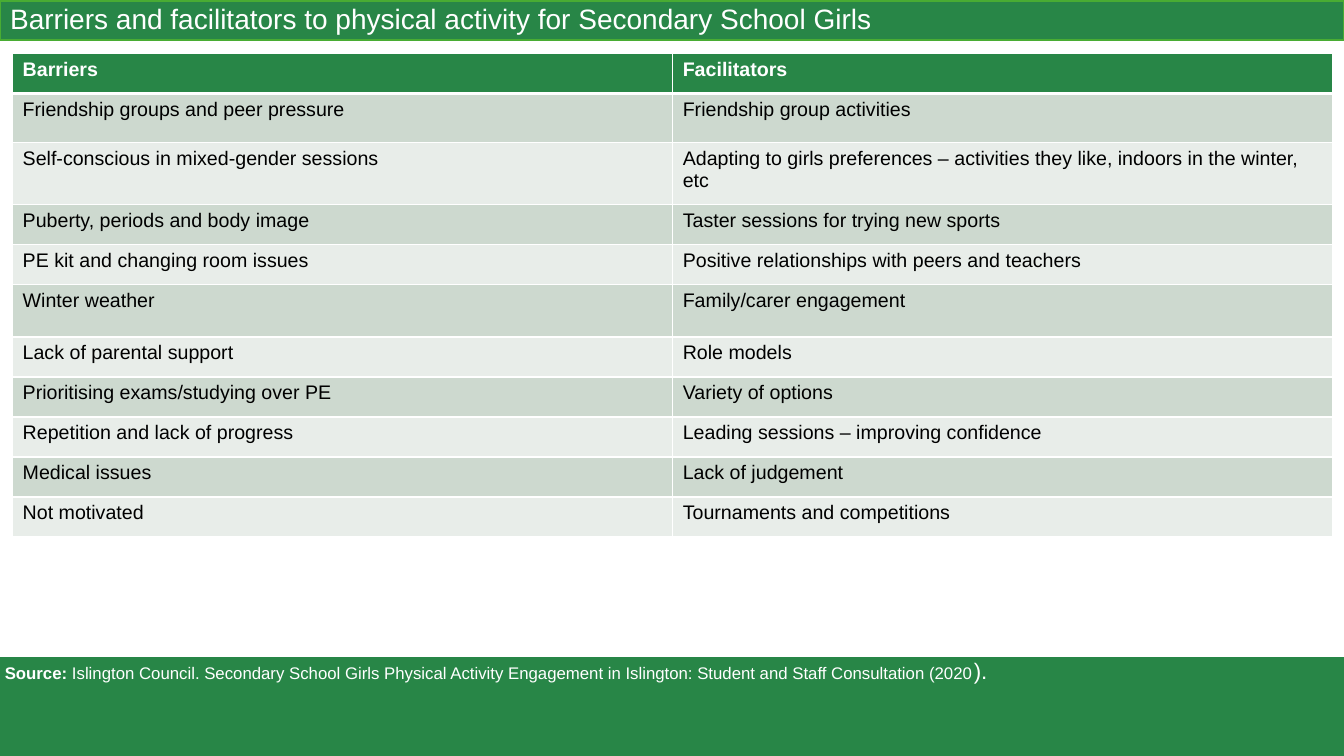
from lxml import etree
from pptx import Presentation
from pptx.dml.color import RGBColor
from pptx.enum.shapes import MSO_SHAPE
from pptx.enum.text import MSO_ANCHOR, MSO_AUTO_SIZE, PP_ALIGN
from pptx.oxml.ns import qn
from pptx.util import Pt

RECT = MSO_SHAPE.RECTANGLE
MIDDLE = MSO_ANCHOR.MIDDLE
NO_FIT = MSO_AUTO_SIZE.NONE
LEFT = PP_ALIGN.LEFT

GREEN = RGBColor(0x28, 0x86, 0x47)
BRIGHT_GREEN = RGBColor(0x49, 0xAC, 0x33)
BAND_DARK = RGBColor(0xCD, 0xD9, 0xCF)
BAND_LIGHT = RGBColor(0xE8, 0xED, 0xE9)
WHITE = RGBColor(0xFF, 0xFF, 0xFF)
BLACK = RGBColor(0, 0, 0)
FONT = "Arial"

ROWS = [
    ("Barriers", "Facilitators"),
    ("Friendship groups and peer pressure", "Friendship group activities"),
    ("Self-conscious in mixed-gender sessions",
     "Adapting to girls preferences – activities they like, indoors in the winter, etc"),
    ("Puberty, periods and body image", "Taster sessions for trying new sports"),
    ("PE kit and changing room issues", "Positive relationships with peers and teachers"),
    ("Winter weather", "Family/carer engagement"),
    ("Lack of parental support", "Role models"),
    ("Prioritising exams/studying over PE", "Variety of options"),
    ("Repetition and lack of progress", "Leading sessions – improving confidence"),
    ("Medical issues", "Lack of judgement"),
    ("Not motivated", "Tournaments and competitions"),
]
ROW_HEIGHT = 28.6
TALL_ROWS = {1: 35, 2: 44.6, 5: 37.2}


def add_border(cell, side, width):
    ln = etree.SubElement(cell._tc.get_or_add_tcPr(), qn(f"a:ln{side}"), w=str(Pt(width)))
    fill = etree.SubElement(ln, qn("a:solidFill"))
    etree.SubElement(fill, qn("a:srgbClr"), val=str(WHITE))


def clear_margins(tf):
    tf.margin_left = tf.margin_right = tf.margin_top = tf.margin_bottom = 0
    tf.word_wrap = True
    tf.auto_size = NO_FIT


prs = Presentation()
prs.slide_width, prs.slide_height = Pt(960), Pt(540)
s = prs.slides.add_slide(prs.slide_layouts[5])

# Footer band
band = s.shapes.add_shape(RECT, 0, Pt(469.4), Pt(960), Pt(70.6))
band.shadow.inherit = False
band.fill.solid()
band.fill.fore_color.rgb = GREEN
band.line.fill.background()

# Title bar
title = s.shapes.title
title.left, title.top, title.width, title.height = 0, Pt(0.7), Pt(960), Pt(28.1)
title.fill.solid()
title.fill.fore_color.rgb = GREEN
title.line.color.rgb = BRIGHT_GREEN
title.line.width = Pt(1.5)
tf = title.text_frame
clear_margins(tf)
tf.margin_left = Pt(7.2)
tf.vertical_anchor = MIDDLE
p = tf.paragraphs[0]
p.text = "Barriers and facilitators to physical activity for Secondary School Girls"
p.alignment = LEFT
p.line_spacing = 0.9
p.font.name, p.font.size, p.font.color.rgb = FONT, Pt(20), WHITE

# Barriers and facilitators table
heights = [TALL_ROWS.get(i, ROW_HEIGHT) for i in range(len(ROWS))]
table = s.shapes.add_table(len(ROWS), 2, Pt(9), Pt(38.2), Pt(943), Pt(sum(heights))).table
for column in table.columns:
    column.width = Pt(471.5)
for i, texts in enumerate(ROWS):
    header = i == 0
    table.rows[i].height = Pt(heights[i])
    for j, text in enumerate(texts):
        cell = table.cell(i, j)
        widths = {"L": 1, "R": 1, "T": 3 if i == 1 else 1, "B": 3 if header else 1}
        for side, width in widths.items():
            add_border(cell, side, width)
        cell.fill.solid()
        cell.fill.fore_color.rgb = GREEN if header else BAND_DARK if i % 2 else BAND_LIGHT
        p = cell.text_frame.paragraphs[0]
        p.text = text
        p.font.name, p.font.size, p.font.bold = FONT, Pt(14), header
        p.font.color.rgb = WHITE if header else BLACK

# Source line
source = s.shapes.add_textbox(Pt(3.4), Pt(469.4), Pt(871), Pt(24))
clear_margins(source.text_frame)
p = source.text_frame.paragraphs[0]
p.font.name, p.font.color.rgb = FONT, WHITE
for text, size, bold in [
    ("Source: ", 12, True),
    ("Islington Council. Secondary School Girls Physical Activity Engagement in Islington: "
     "Student and Staff Consultation (2020", 12, False),
    (").", 16, False),
]:
    r = p.add_run()
    r.text = text
    r.font.size, r.font.bold = Pt(size), bold

prs.save("out.pptx")
